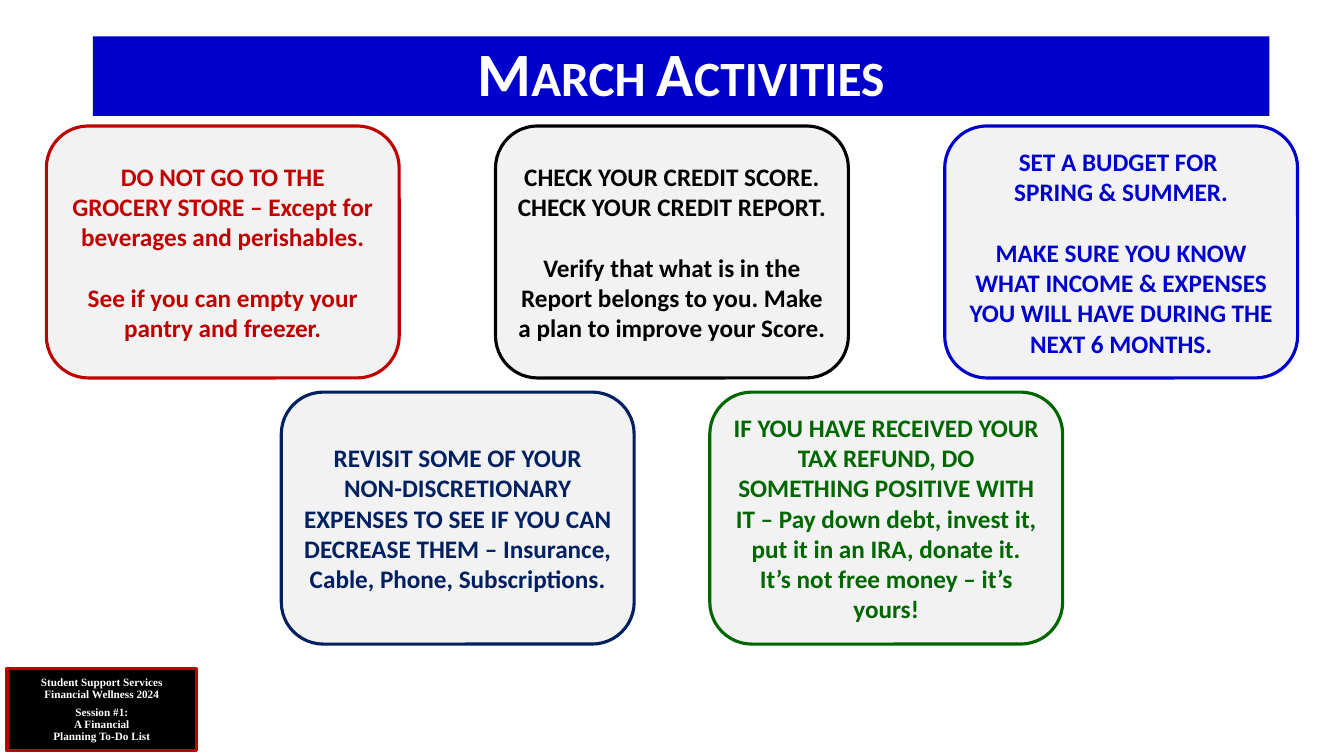
from pptx import Presentation
from pptx.dml.color import RGBColor
from pptx.enum.shapes import MSO_SHAPE
from pptx.enum.text import MSO_ANCHOR, MSO_AUTO_SIZE, PP_ALIGN
from pptx.util import Inches, Pt

RECT, ROUNDED = MSO_SHAPE.RECTANGLE, MSO_SHAPE.ROUNDED_RECTANGLE
MIDDLE, CENTER = MSO_ANCHOR.MIDDLE, PP_ALIGN.CENTER
NO_AUTOFIT = MSO_AUTO_SIZE.NONE
TITLE_ONLY = 5

COLORS = {
    "white": "FFFFFF", "black": "000000", "card": "F2F2F2", "red": "C00000",
    "blue": "0000CC", "navy": "002060", "green": "006600",
}
CARD_W, CARD_H = 3.5, 2.5

# Each row: left of first card, top, step between cards, cards.
# Each card: colour and (text, space before in points) paragraphs.
ROWS = [
    (0.46, 1.25, 4.455, [
        ("red", [
            ("DO NOT GO TO THE GROCERY STORE – Except for beverages and perishables.", 0),
            ("See if you can empty your pantry and freezer.", 22)]),
        ("black", [
            ("CHECK YOUR CREDIT SCORE.", 0),
            ("CHECK YOUR CREDIT REPORT.", 0),
            ("Verify that what is in the Report belongs to you. "
             "Make a plan to improve your Score.", 22)]),
        ("blue", [
            ("SET A BUDGET FOR \nSPRING & SUMMER.", 0),
            ("MAKE SURE YOU KNOW WHAT INCOME & EXPENSES "
             "YOU WILL HAVE DURING THE NEXT 6 MONTHS.", 22)]),
    ]),
    (2.79, 3.89, 4.25, [
        ("navy", [
            ("REVISIT SOME OF YOUR NON-DISCRETIONARY EXPENSES TO SEE IF YOU CAN "
             "DECREASE THEM – Insurance, Cable, Phone, Subscriptions.", 0)]),
        ("green", [
            ("IF YOU HAVE RECEIVED YOUR TAX REFUND, DO SOMETHING POSITIVE WITH IT – "
             "Pay down debt, invest it, put it in an IRA, donate it.", 0),
            ("It’s not free money – it’s yours!", 0)]),
    ]),
]
SESSION = [
    ("Student Support Services", 0), ("Financial Wellness 2024", 0),
    ("Session #1:", 4), ("A Financial", 0), ("Planning To-Do List", 0),
]


class ActivitySlide:
    def __init__(self, prs):
        self.s = prs.slides.add_slide(prs.slide_layouts[TITLE_ONLY])

    def color(self, name):
        return RGBColor.from_string(COLORS[name])

    def fill(self, sp, name):
        sp.fill.solid()
        sp.fill.fore_color.rgb = self.color(name)

    def set_text(self, sp, paragraphs, font, size, color, line_spacing=1.0):
        tf = sp.text_frame
        tf.word_wrap = True
        tf.auto_size = NO_AUTOFIT
        tf.vertical_anchor = MIDDLE
        for i, (text, before) in enumerate(paragraphs):
            p = tf.add_paragraph() if i else tf.paragraphs[0]
            p.text = text
            p.alignment = CENTER
            p.line_spacing = line_spacing
            p.space_before = Pt(before)
            for r in p.runs:
                r.font.name = font
                r.font.size = Pt(size)
                r.font.bold = True
                r.font.color.rgb = self.color(color)

    def title(self, text, x, y, w, h):
        sp = self.s.shapes.title
        sp.left, sp.top, sp.width, sp.height = map(Inches, (x, y, w, h))
        self.fill(sp, "blue")
        self.set_text(sp, [(text, 0)], "Calibri", 44, "white", 0.9)
        for r in sp.text_frame.paragraphs[0].runs:
            r._r.get_or_add_rPr().set("cap", "small")

    def box(self, shape, x, y, w, h, fill, line):
        sp = self.s.shapes.add_shape(shape, *map(Inches, (x, y, w, h)))
        sp.shadow.inherit = False
        self.fill(sp, fill)
        sp.line.color.rgb = self.color(line)
        sp.line.width = Pt(2.25)
        return sp

    def card(self, x, y, color, paragraphs):
        sp = self.box(ROUNDED, x, y, CARD_W, CARD_H, "card", color)
        self.set_text(sp, paragraphs, "Calibri", 18, color)

    def session_label(self, x, y, w, h):
        sp = self.box(RECT, x, y, w, h, "black", "red")
        self.set_text(sp, SESSION, "Times New Roman", 8, "white", 0.9)


def main():
    prs = Presentation()
    prs.slide_width, prs.slide_height = Inches(13.33), Inches(7.5)
    slide = ActivitySlide(prs)
    slide.session_label(0.07, 6.63, 1.88, 0.82)
    slide.title("March Activities", 0.92, 0.36, 11.67, 0.79)
    for left, top, step, cards in ROWS:
        for i, (color, paragraphs) in enumerate(cards):
            slide.card(left + i * step, top, color, paragraphs)
    prs.save("out.pptx")


if __name__ == "__main__":
    main()
